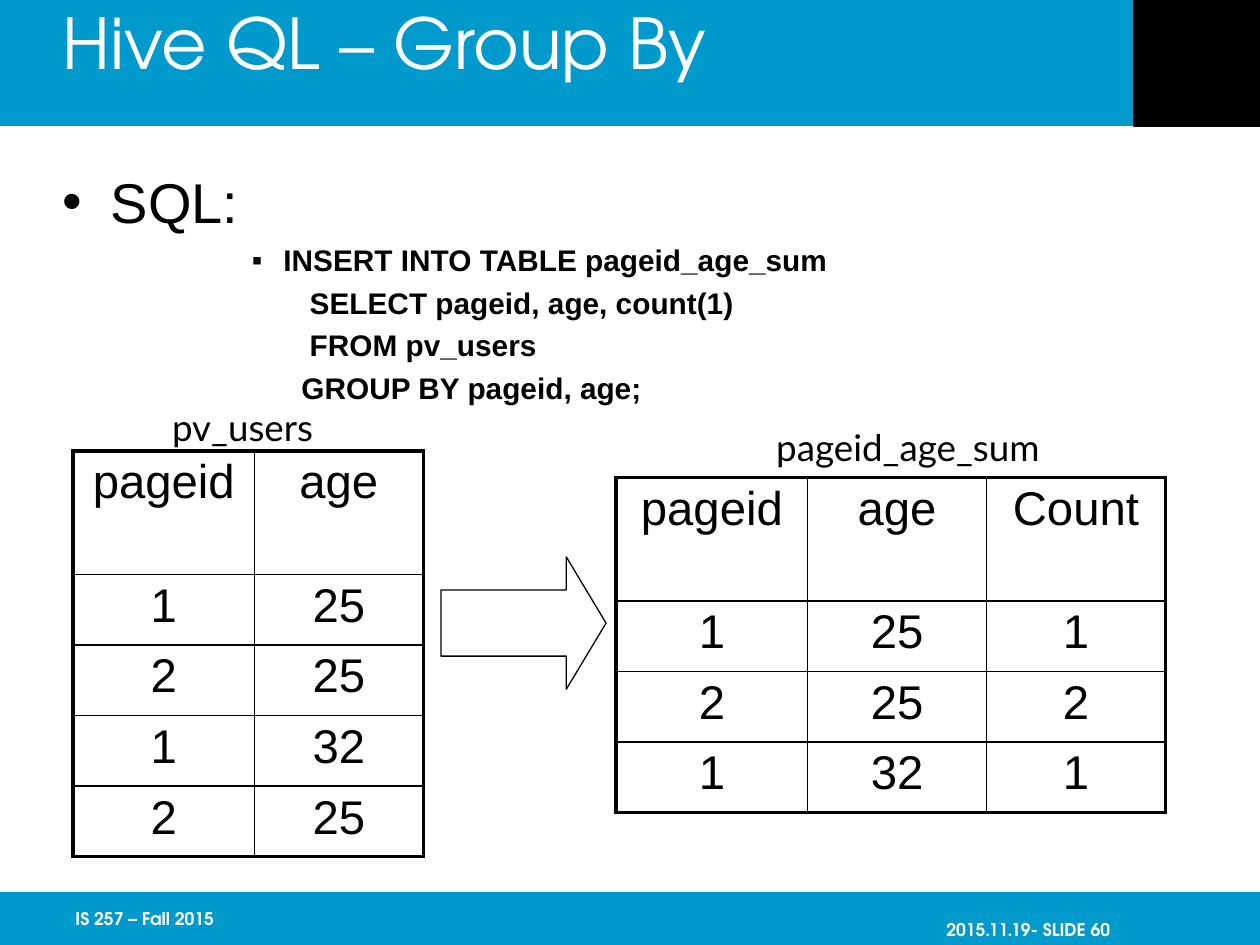
from lxml import etree
from pptx import Presentation
from pptx.dml.color import RGBColor
from pptx.enum.shapes import MSO_SHAPE
from pptx.enum.text import MSO_ANCHOR, PP_ALIGN
from pptx.oxml.ns import qn
from pptx.util import Inches, Pt

RECT, ARROW = MSO_SHAPE.RECTANGLE, MSO_SHAPE.RIGHT_ARROW
TOP, MIDDLE = MSO_ANCHOR.TOP, MSO_ANCHOR.MIDDLE
LEFT, CENTER, RIGHT = PP_ALIGN.LEFT, PP_ALIGN.CENTER, PP_ALIGN.RIGHT
COLORS = {"blue": "0099CC", "black": "000000", "white": "FFFFFF"}
HEAD = "TeX Gyre Adventor"
QUERY = [
    "INSERT INTO TABLE pageid_age_sum",
    "       SELECT pageid, age, count(1)",
    "       FROM pv_users",
    "      GROUP BY pageid, age;",
]
USERS = [("pageid", "age"), ("1", "25"), ("2", "25"), ("1", "32"), ("2", "25")]
SUMS = [("pageid", "age", "Count"), ("1", "25", "1"), ("2", "25", "2"), ("1", "32", "1")]


def rgb(name):
    return RGBColor.from_string(COLORS[name])


def set_inset(item, left, top, right, bottom):
    item.margin_left, item.margin_top = Inches(left), Inches(top)
    item.margin_right, item.margin_bottom = Inches(right), Inches(bottom)


def write(para, text, size=18, font="Arial", color="black", bold=False,
          align=LEFT, before=0, indent=(0, 0), bullet=None):
    """Fill a paragraph; indent is (left margin, first line) in inches."""
    props = para._p.get_or_add_pPr()
    props.set("marL", str(Inches(indent[0])))
    props.set("indent", str(Inches(indent[1])))
    para.alignment = align
    para.space_before = Pt(before)
    if bullet:
        etree.SubElement(props, qn("a:buFont")).set("typeface", "Arial")
        etree.SubElement(props, qn("a:buChar")).set("char", bullet)
    else:
        etree.SubElement(props, qn("a:buNone"))
    run = para.add_run()
    run.text = text
    run.font.size, run.font.name, run.font.bold = Pt(size), font, bold
    run.font.color.rgb = rgb(color)


def add_frame(slide, box, inset=(0, 0, 0, 0), anchor=TOP, wrap=True):
    frame = slide.shapes.add_textbox(*map(Inches, box)).text_frame
    frame.word_wrap = wrap
    frame.vertical_anchor = anchor
    set_inset(frame, *inset)
    return frame


def add_block(slide, kind, box, fill, line=None):
    shape = slide.shapes.add_shape(kind, *map(Inches, box))
    shape.shadow.inherit = False
    shape.fill.solid()
    shape.fill.fore_color.rgb = rgb(fill)
    if line:
        shape.line.color.rgb = rgb(line)
        shape.line.width = Pt(0.75)
    else:
        shape.line.fill.background()
    return shape


def set_border(cell, side, width):
    line = etree.SubElement(cell._tc.get_or_add_tcPr(), qn("a:ln" + side))
    line.set("w", str(Pt(width)))
    fill = etree.SubElement(line, qn("a:solidFill"))
    etree.SubElement(fill, qn("a:srgbClr")).set("val", COLORS["black"])


def add_grid(slide, left, top, cols, rows):
    """Add a table with a thick outer frame and thin inner lines."""
    heights = [0.98] + [0.56] * (len(rows) - 1)
    box = (left, top, sum(cols), sum(heights))
    table = slide.shapes.add_table(len(rows), len(cols), *map(Inches, box)).table
    table.first_row = table.horz_banding = False
    for col, width in zip(table.columns, cols):
        col.width = Inches(width)
    for r, row in enumerate(rows):
        table.rows[r].height = Inches(heights[r])
        for c, text in enumerate(row):
            cell = table.cell(r, c)
            set_inset(cell, 0.07, 0.04, 0.07, 0.04)
            edges = {"L": c == 0, "R": c == len(cols) - 1,
                     "T": r == 0, "B": r == len(rows) - 1}
            for side, outer in edges.items():
                set_border(cell, side, 2.25 if outer else 1)
            cell.fill.solid()
            cell.fill.fore_color.rgb = rgb("white")
            write(cell.text_frame.paragraphs[0], text, size=27, align=CENTER)


def add_label(slide, box, text):
    frame = add_frame(slide, box, (0.08, 0.04, 0.08, 0.04), wrap=False)
    write(frame.paragraphs[0], text, size=21, font="Lato", align=CENTER)


def add_header(slide, left, top, width, height):
    add_block(slide, RECT, (left, top, width, height), "blue")
    add_block(slide, RECT, (left + width - 1, top, 1, height), "black", "black")
    frame = add_frame(slide, (left + 0.5, top, width - 1.5, height))
    write(frame.paragraphs[0], "Hive QL – Group By", size=40, font=HEAD, color="white")


def add_footer(slide, left, top, width, height):
    add_block(slide, RECT, (left, top, width, height), "blue")
    notes = [
        ((left + 0.5, top, 2.08, height), "IS 257 – Fall 2015", LEFT),
        ((left + 6.73, top + 0.18, 2.08, 0.24), "2015.11.19- SLIDE 60", RIGHT),
    ]
    for box, text, align in notes:
        frame = add_frame(slide, box, (0.1, 0, 0, 0), MIDDLE)
        write(frame.paragraphs[0], text, size=10, font=HEAD, color="white",
              bold=True, align=align)


def add_query(slide, *box):
    frame = add_frame(slide, box)
    write(frame.paragraphs[0], "SQL:", size=32, indent=(0.38, -0.38), bullet="•")
    for i, text in enumerate(QUERY):
        indent, bullet = ((1.5, 0), None) if i else ((1.75, -0.25), "▪")
        write(frame.add_paragraph(), text, size=17, bold=True, before=4,
              indent=indent, bullet=bullet)


def add_flow(slide, left, top):
    """Draw the source table, the arrow and the grouped table."""
    add_grid(slide, left, top + 0.41, (1.44, 1.34), USERS)
    add_label(slide, (left + 0.67, top, 1.35, 0.43), "pv_users")
    add_grid(slide, left + 4.31, top + 0.62, (1.52, 1.42, 1.42), SUMS)
    add_label(slide, (left + 5.42, top + 0.16, 2.41, 0.43), "pageid_age_sum")
    arrow = add_block(slide, ARROW, (left + 2.92, top + 1.25, 1.31, 1.05), "white", "black")
    arrow.adjustments[0], arrow.adjustments[1] = 0.5, 0.3


def main():
    deck = Presentation()
    deck.slide_width, deck.slide_height = Inches(10), Inches(7.5)
    slide = deck.slides.add_slide(deck.slide_layouts[6])
    add_header(slide, 0, 0, 10, 1)
    add_footer(slide, 0, 7.08, 10, 0.42)
    add_query(slide, 0.5, 1.33, 9, 5.42)
    add_flow(slide, 0.58, 3.17)
    deck.save("out.pptx")


if __name__ == "__main__":
    main()
